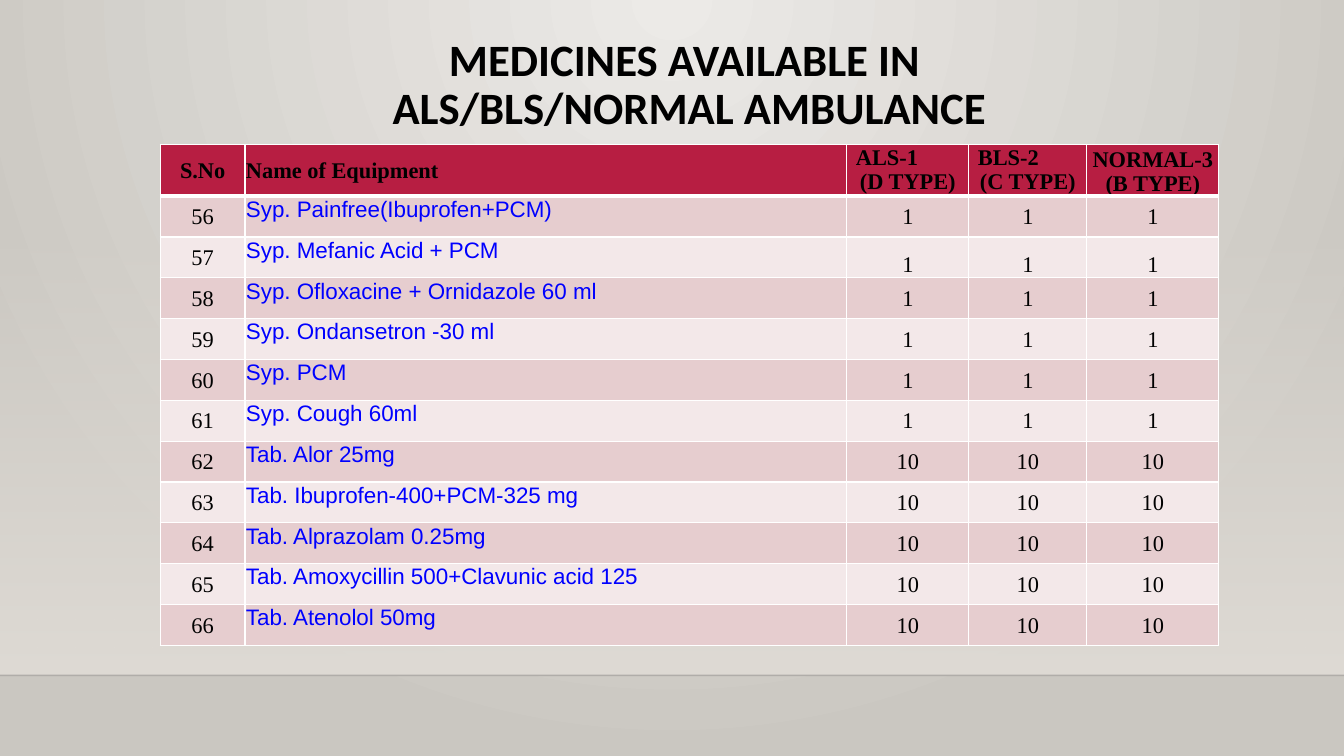
from lxml.etree import SubElement
from pptx import Presentation
from pptx.dml.color import RGBColor
from pptx.enum.shapes import MSO_CONNECTOR, MSO_SHAPE
from pptx.enum.text import MSO_ANCHOR, PP_ALIGN
from pptx.oxml import parse_xml
from pptx.oxml.ns import nsdecls, qn
from pptx.util import Inches, Pt

HUES = {
    "light": "ECEAE7", "dark": "CAC7C1", "wall": "DFDBD5", "edge": "000001",
    "head": "B71E42", "odd": "E6CDCF", "even": "F3E8E9",
    "rule": "FFFFFF", "ink": "000000", "drug": "0000FF",
}
WIDTHS = [0.84, 5.97, 1.21, 1.17, 1.31]
HEADS = ["S.No", "Name of Equipment", "ALS-1\n(D TYPE)", "BLS-2\n(C TYPE)", "NORMAL-3\n(B TYPE)"]
FIRST = 56
DRUGS = [
    ("Syp. Painfree(Ibuprofen+PCM)", 1),
    ("Syp. Mefanic Acid + PCM", 1),
    ("Syp. Ofloxacine + Ornidazole 60 ml", 1),
    ("Syp. Ondansetron -30 ml", 1),
    ("Syp. PCM", 1),
    ("Syp. Cough 60ml", 1),
    ("Tab. Alor 25mg", 10),
    ("Tab. Ibuprofen-400+PCM-325 mg", 10),
    ("Tab. Alprazolam 0.25mg", 10),
    ("Tab. Amoxycillin 500+Clavunic acid 125", 10),
    ("Tab. Atenolol 50mg", 10),
]
BASE = {"name": "Times New Roman", "size": Pt(16), "bold": False}
BOLD = {**BASE, "bold": True}
DRUG = {**BASE, "name": "Arial"}
TITLE = {"name": "Calibri", "size": Pt(32), "bold": True}
INSETS = {"margin_left": Inches(0.01), "margin_top": Inches(0.01),
          "margin_right": Inches(0.01), "margin_bottom": 0}


def color(key):
    return RGBColor.from_string(HUES[key])


def apply(item, values):
    for name, value in values.items():
        setattr(item, name, value)


def style(para, font, hue, align, space=None):
    apply(para, {"alignment": align, "line_spacing": space})
    apply(para.font, font)
    para.font.color.rgb = color(hue)


def blend(fill, keys):
    fill.gradient()
    for stop, key, place in zip(fill.gradient_stops, keys, (0, 1)):
        stop.color.rgb = color(key)
        stop.position = place


def fade(node, percent):
    SubElement(node, qn("a:alpha")).set("val", str(percent * 1000))


def add_back(slide):
    blend(slide.background.fill, ("light", "dark"))
    lin = slide.element.xpath(".//p:bg//a:lin")[0]
    lin.getparent().replace(lin, parse_xml(
        f'<a:path {nsdecls("a")} path="circle">'
        '<a:fillToRect l="43000" t="0" r="43000" b="100000"/></a:path>'))


def add_wall(slide):
    wall = slide.shapes.add_shape(
        MSO_SHAPE.RECTANGLE, 0, Inches(2.21), Inches(13.33), Inches(4.49))
    wall.shadow.inherit = False
    wall.line.fill.background()
    blend(wall.fill, ("wall", "wall"))
    wall.fill.gradient_angle = 270
    fade(wall.element.xpath(".//a:gs/a:srgbClr")[0], 0)


def add_edge(slide):
    edge = slide.shapes.add_connector(
        MSO_CONNECTOR.STRAIGHT, 0, Inches(6.7), Inches(13.33), Inches(6.7))
    edge.line.width = Pt(1)
    edge.line.color.rgb = color("edge")
    fade(edge.element.xpath(".//a:ln//a:srgbClr")[0], 20)
    SubElement(edge.element.spPr, qn("a:effectLst"))


def add_title(slide):
    box = slide.shapes.add_textbox(Inches(1.59), Inches(0.28), Inches(10.5), Inches(1.15))
    apply(box.text_frame, {"word_wrap": True, "vertical_anchor": MSO_ANCHOR.MIDDLE})
    para = box.text_frame.paragraphs[0]
    para.text = "MEDICINES AVAILABLE IN \vALS/BLS/NORMAL AMBULANCE"
    style(para, TITLE, "ink", PP_ALIGN.CENTER, 0.9)


def add_rules(cell, base):
    props = cell._tc.get_or_add_tcPr()
    for place, (side, width) in enumerate({"L": 1, "R": 1, "T": 1, "B": base}.items()):
        props.insert(place, parse_xml(
            f'<a:ln{side} {nsdecls("a")} w="{Pt(width)}"><a:solidFill>'
            f'<a:srgbClr val="{HUES["rule"]}"/></a:solidFill></a:ln{side}>'))


def fill_cell(cell, text, font, hue, back, align, anchor, base=1):
    apply(cell, {**INSETS, "text": text, "vertical_anchor": anchor})
    cell.fill.solid()
    cell.fill.fore_color.rgb = color(back)
    add_rules(cell, base)
    for para in cell.text_frame.paragraphs:
        style(para, font, hue, align, 0.95 if "\n" in text else None)


def fill_head(table):
    for col, text in enumerate(HEADS):
        align = PP_ALIGN.LEFT if col == 1 else PP_ALIGN.CENTER
        anchor = MSO_ANCHOR.BOTTOM if col == 4 else MSO_ANCHOR.MIDDLE
        cell = table.cell(0, col)
        fill_cell(cell, text, BOLD, "ink", "head", align, anchor, 3)
        if col in (2, 3):
            para = cell.text_frame.paragraphs[0]
            para.alignment = PP_ALIGN.LEFT
            para._p.get_or_add_pPr().set("marL", str(Inches(0.08)))


def fill_row(table, row, drug, count):
    back = "odd" if row % 2 else "even"
    for col, text in enumerate([FIRST + row - 1, drug, count, count, count]):
        cell = table.cell(row, col)
        if col == 1:
            fill_cell(cell, text, DRUG, "drug", back, PP_ALIGN.LEFT, MSO_ANCHOR.TOP)
        else:
            low = row == 2 and col > 1
            anchor = MSO_ANCHOR.BOTTOM if low else MSO_ANCHOR.MIDDLE
            fill_cell(cell, str(text), BASE, "ink", back, PP_ALIGN.CENTER, anchor)


def add_drugs(slide):
    table = slide.shapes.add_table(
        len(DRUGS) + 1, len(WIDTHS), Inches(1.59), Inches(1.43),
        Inches(10.5), Inches(4.96)).table
    for col, width in zip(table.columns, WIDTHS):
        col.width = Inches(width)
    for row in table.rows:
        row.height = Inches(4.46) // len(DRUGS)
    table.rows[0].height = Inches(0.5)
    fill_head(table)
    for row, (drug, count) in enumerate(DRUGS, 1):
        fill_row(table, row, drug, count)


def main():
    deck = Presentation()
    apply(deck, {"slide_width": Inches(13.33), "slide_height": Inches(7.5)})
    slide = deck.slides.add_slide(deck.slide_layouts[6])
    for add in (add_back, add_wall, add_edge, add_title, add_drugs):
        add(slide)
    deck.save("out.pptx")


if __name__ == "__main__":
    main()
